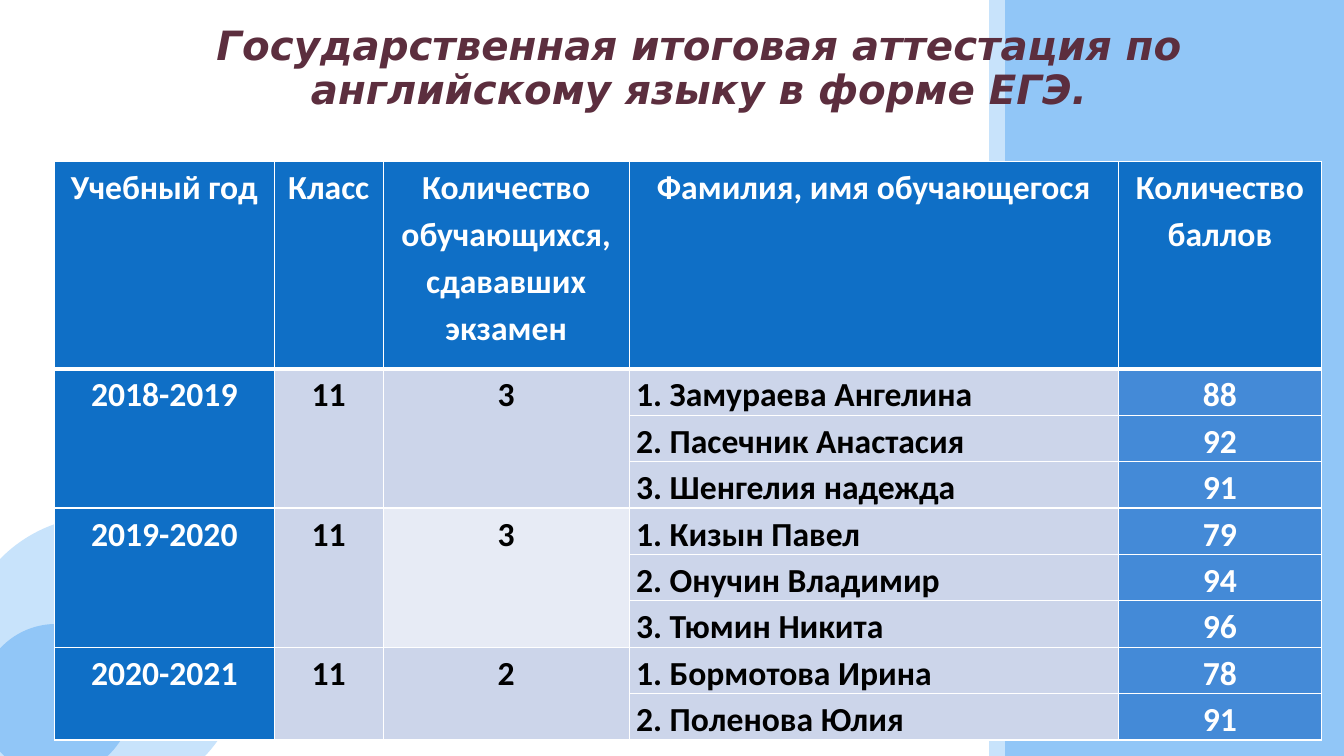
from lxml import etree
from pptx import Presentation
from pptx import util as u
from pptx.dml.color import RGBColor
from pptx.enum import shapes, text
from pptx.oxml import ns

COLOURS = {
    "white": "FFFFFF", "black": "000000", "plum": "5C2E3E",
    "pale": "C8E3FB", "sky": "91C6F7", "blue": "0F6FC6",
    "score": "448AD7", "band": "CCD5EA", "light_band": "E7EBF5",
}

TITLE = "Государственная итоговая аттестация по английскому языку в форме ЕГЭ."
TITLE_FONT = {"name": "DejaVu Sans", "size": u.Pt(28.8), "bold": True, "italic": True}
TABLE_FONT = {"name": "Calibri", "size": u.Pt(24), "bold": True}
CELL_FORMAT = {
    "margin_left": u.Inches(0.07), "margin_right": u.Inches(0.07),
    "margin_top": 0, "margin_bottom": 0, "vertical_anchor": text.MSO_ANCHOR.TOP,
}

BACKDROP = [
    (shapes.MSO_SHAPE.RECTANGLE, "pale", (9.81, 0, 3.52, 7.5)),
    (shapes.MSO_SHAPE.OVAL, "pale", (-0.4, 5.12, 2.82, 2.82)),
    (shapes.MSO_SHAPE.OVAL, "sky", (-0.2, 6.19, 1.51, 1.51)),
    (shapes.MSO_SHAPE.RECTANGLE, "sky", (9.97, 0, 3.36, 7.5)),
]

COLUMN_WIDTHS = [2.18, 1.08, 2.44, 4.85, 2.02]
HEADER_HEIGHT = 2.06
ROW_HEIGHT = 0.46
HEADERS = [
    "Учебный год", "Класс", "Количество обучающихся, сдававших экзамен",
    "Фамилия, имя обучающегося", "Количество баллов",
]
YEARS = [
    ("2018-2019", "band",
     [("Замураева Ангелина", 88), ("Пасечник Анастасия", 92), ("Шенгелия надежда", 91)]),
    ("2019-2020", "light_band",
     [("Кизын Павел", 79), ("Онучин Владимир", 94), ("Тюмин Никита", 96)]),
    ("2020-2021", "band",
     [("Бормотова Ирина", 78), ("Поленова Юлия", 91)]),
]


def colour(name):
    return RGBColor.from_string(COLOURS[name])


def apply_format(target, values):
    for name, value in values.items():
        setattr(target, name, value)


def write_text(frame, content, font, ink, spacing, align=text.PP_ALIGN.CENTER):
    para = frame.paragraphs[0]
    apply_format(para, {"alignment": align, "line_spacing": spacing})
    span = para.add_run()
    span.text = content
    apply_format(span.font, font)
    span.font.color.rgb = colour(ink)


def add_backdrop(page):
    for kind, fill, bounds in BACKDROP:
        shape = page.shapes.add_shape(kind, *map(u.Inches, bounds))
        shape.shadow.inherit = False
        shape.fill.solid()
        shape.fill.fore_color.rgb = colour(fill)
        shape.line.fill.background()


def add_title(page):
    box = page.shapes.add_textbox(*map(u.Inches, (0.54, 0.17, 12.79, 1)))
    apply_format(box.text_frame, {"word_wrap": True, "vertical_anchor": text.MSO_ANCHOR.BOTTOM})
    write_text(box.text_frame, TITLE, TITLE_FONT, "plum", 0.9)


def set_borders(cell, top, bottom):
    properties = cell._tc.get_or_add_tcPr()
    for side, points in {"L": 1, "R": 1, "T": top, "B": bottom}.items():
        line = etree.SubElement(properties, ns.qn(f"a:ln{side}"), w=str(u.Pt(points)))
        fill = etree.SubElement(line, ns.qn("a:solidFill"))
        etree.SubElement(fill, ns.qn("a:srgbClr"), val=COLOURS["white"])


def style_cell(cell, fill, top=1, bottom=1):
    set_borders(cell, top, bottom)
    cell.fill.solid()
    cell.fill.fore_color.rgb = colour(fill)
    apply_format(cell, CELL_FORMAT)


def write_cell(cell, content, ink, align=text.PP_ALIGN.CENTER):
    write_text(cell.text_frame, content, TABLE_FONT, ink, 1.15, align)


def fill_year(table, first, year, count_fill, pupils):
    last = first + len(pupils) - 1
    for offset, (pupil, score) in enumerate(pupils):
        row = first + offset
        fills = ["blue", "band", count_fill, "band", "score"]
        for column, fill in enumerate(fills):
            style_cell(table.cell(row, column), fill, top=3 if row == 1 else 1)
        write_cell(table.cell(row, 3), f"{offset + 1}. {pupil}", "black", text.PP_ALIGN.LEFT)
        write_cell(table.cell(row, 4), str(score), "white")
    summary = [(year, "white"), ("11", "black"), (str(len(pupils)), "black")]
    for column, (content, ink) in enumerate(summary):
        table.cell(first, column).merge(table.cell(last, column))
        write_cell(table.cell(first, column), content, ink)


def add_results(page):
    count = sum(len(pupils) for _, _, pupils in YEARS)
    bounds = (0.54, 1.6, sum(COLUMN_WIDTHS), HEADER_HEIGHT + count * ROW_HEIGHT)
    table = page.shapes.add_table(
        count + 1, len(HEADERS), *map(u.Inches, bounds)).table
    for column, width in zip(table.columns, COLUMN_WIDTHS):
        column.width = u.Inches(width)
    for index, row in enumerate(table.rows):
        row.height = u.Inches(ROW_HEIGHT if index else HEADER_HEIGHT)
    for column, header in enumerate(HEADERS):
        style_cell(table.cell(0, column), "blue", bottom=3)
        write_cell(table.cell(0, column), header, "white")
    first = 1
    for year, count_fill, pupils in YEARS:
        fill_year(table, first, year, count_fill, pupils)
        first += len(pupils)


def main():
    deck = Presentation()
    apply_format(deck, {"slide_width": u.Inches(13.33), "slide_height": u.Inches(7.5)})
    page = deck.slides.add_slide(deck.slide_layouts[6])
    add_backdrop(page)
    add_title(page)
    add_results(page)
    deck.save("out.pptx")


if __name__ == "__main__":
    main()
